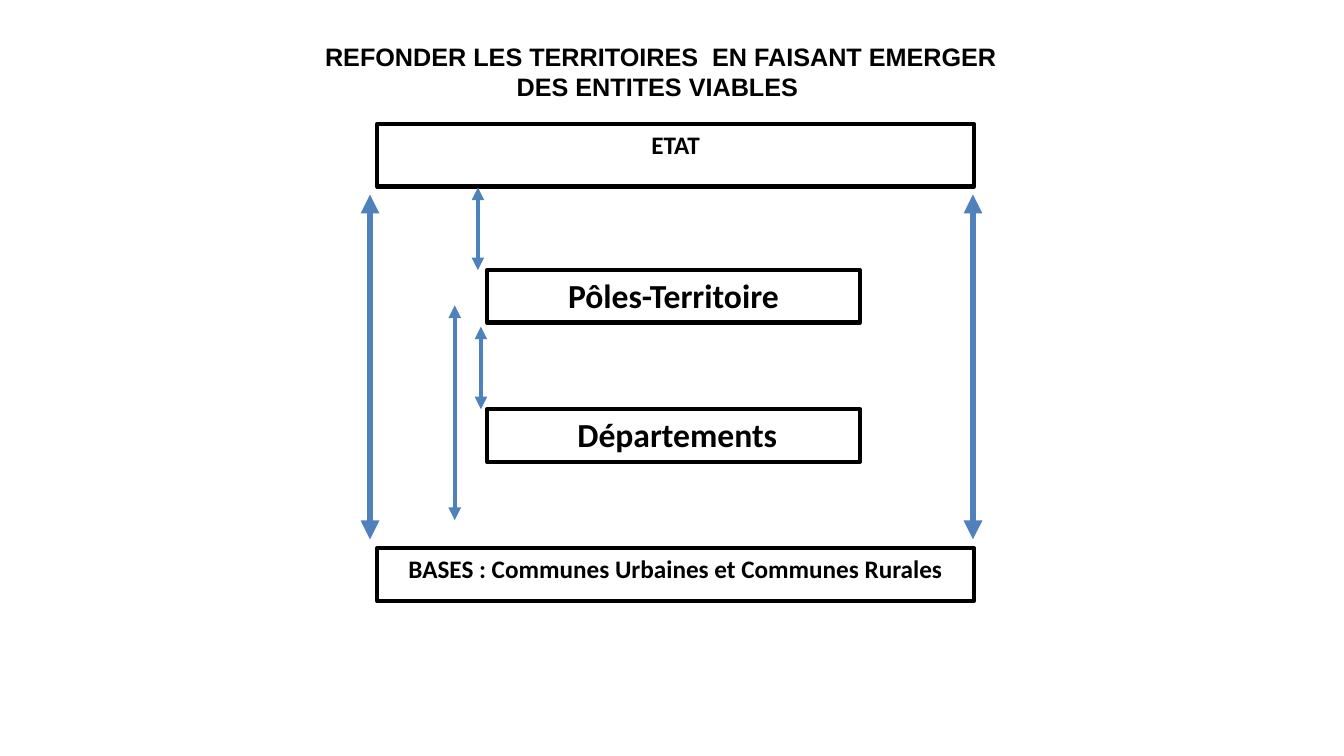
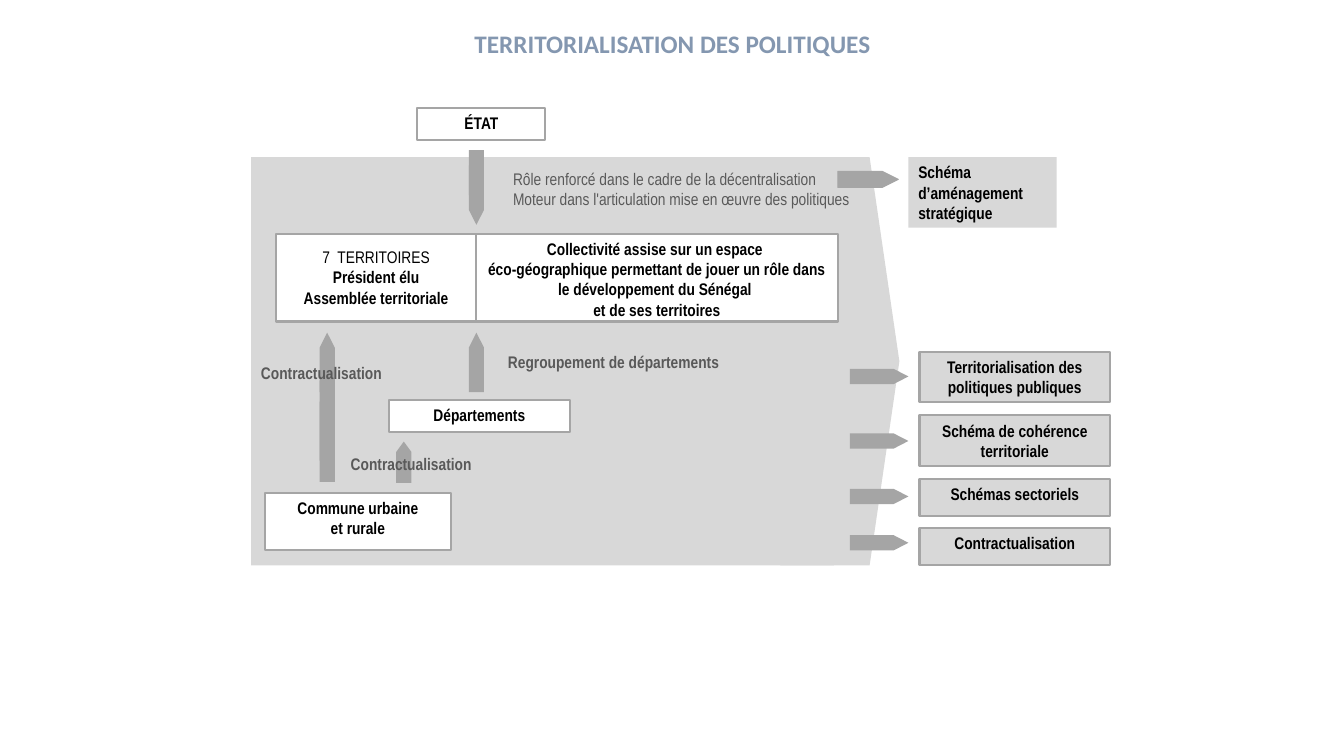
from dataclasses import dataclass

from lxml import etree
from pptx import Presentation
from pptx import util as u
from pptx.dml import color
from pptx.enum import shapes, text
from pptx.oxml import ns

HUES = {
    "black": "000000", "white": "FFFFFF", "blue": "4F81BD", "steel": "8497B0",
    "pale": "D8D8D8", "grey": "A5A5A5", "dark": "595959",
}
KIND = shapes.MSO_SHAPE
LEFT, MID = text.PP_ALIGN.LEFT, text.PP_ALIGN.CENTER
HEAD = 1.67  # point of a plate, relative to its length


@dataclass
class Box:
    x: float
    y: float
    w: float
    h: float
    words: str = ""
    size: float = 12
    fill: str = "white"
    edge: str = "grey"
    align: int = MID
    plain: int = 0  # leading lines that are not bold
    top: float = 0.05


@dataclass
class Label:
    x: float
    y: float
    w: float
    h: float
    words: str
    bold: bool = True


@dataclass
class Arrow:
    x: float
    top: float
    end: float
    width: float = 3


@dataclass
class Plate:
    x: float
    y: float
    w: float
    turn: int = 0
    h: float = 0.15
    edge: float = 0


def hue(name: str) -> color.RGBColor:
    return color.RGBColor.from_string(HUES[name])


def write(frame, words: str, *, font: str = "Arial Narrow", size: float = 12,
          tint: str = "black", bold: bool = True, plain: int = 0,
          align: int = MID, after: float = 0, top: float = 0.05) -> None:
    """Fill a text frame, one paragraph for each line of words."""
    frame.word_wrap = True
    frame.auto_size = text.MSO_AUTO_SIZE.NONE
    frame.vertical_anchor = text.MSO_ANCHOR.TOP
    frame.margin_left = frame.margin_right = u.Inches(0.1)
    frame.margin_top, frame.margin_bottom = u.Inches(top), u.Inches(0.05)
    for i, line in enumerate(words.split("\n")):
        para = frame.add_paragraph() if i else frame.paragraphs[0]
        para.alignment, para.space_after = align, u.Pt(after)
        run = para.add_run()
        run.text = line
        run.font.name, run.font.size = font, u.Pt(size)
        run.font.bold = bold and i >= plain
        run.font.color.rgb = hue(tint)


def place(item, x: float, y: float, w: float, h: float) -> None:
    item.left, item.top = u.Inches(x), u.Inches(y)
    item.width, item.height = u.Inches(w), u.Inches(h)


def new_page(deck, words: str, area: tuple, **style):
    page = deck.slides.add_slide(deck.slide_layouts[5])
    place(page.shapes.title, *area)
    write(page.shapes.title.text_frame, words, size=18, **style)
    return page


def draw(page, kind, x: float, y: float, w: float, h: float, fill: str,
         edge: str = "", width: float = 0):
    item = page.shapes.add_shape(
        kind, u.Inches(x), u.Inches(y), u.Inches(w), u.Inches(h))
    item.shadow.inherit = False
    item.fill.solid()
    item.fill.fore_color.rgb = hue(fill)
    if width:
        item.line.color.rgb = hue(edge)
        item.line.width = u.Pt(width)
    else:
        item.line.fill.background()
    return item


def add_box(page, box: Box, width: float = 1.5, **style) -> None:
    item = draw(page, KIND.RECTANGLE, box.x, box.y, box.w, box.h,
                box.fill, box.edge, width if box.edge else 0)
    write(item.text_frame, box.words, size=box.size, align=box.align,
          plain=box.plain, top=box.top, **style)


def add_label(page, label: Label) -> None:
    item = page.shapes.add_textbox(
        u.Inches(label.x), u.Inches(label.y),
        u.Inches(label.w), u.Inches(label.h))
    write(item.text_frame, label.words, tint="dark", bold=label.bold, align=LEFT)


def add_arrow(page, arrow: Arrow) -> None:
    """Vertical line with a point at each end."""
    x = u.Inches(arrow.x)
    item = page.shapes.add_connector(
        shapes.MSO_CONNECTOR.STRAIGHT,
        x, u.Inches(arrow.top), x, u.Inches(arrow.end))
    item.line.color.rgb = hue("blue")
    item.line.width = u.Pt(arrow.width)
    props = item.line._get_or_add_ln()
    for tag in ("a:headEnd", "a:tailEnd"):
        etree.SubElement(props, ns.qn(tag), type="triangle")
    etree.SubElement(item._element.spPr, ns.qn("a:effectLst"))


def add_plate(page, plate: Plate) -> None:
    item = draw(page, KIND.PENTAGON, plate.x, plate.y, plate.w, plate.h,
                "grey", "grey", plate.edge)
    item.adjustments[0] = plate.w * HEAD
    item.rotation = plate.turn


def levels(deck) -> None:
    page = new_page(
        deck, "REFONDER LES TERRITOIRES  EN FAISANT EMERGER DES ENTITES VIABLES ",
        (2.97, 0.36, 7.17, 1.01), font="Arial")

    # Levels of government, wide at both ends
    wide, slim = (3.74, 5.92), (4.83, 3.7)
    for (x, w), y, h, size, words in (
        (wide, 1.23, 0.62, 18, "ETAT"),
        (slim, 2.68, 0.52, 24, "Pôles-Territoire"),
        (slim, 4.06, 0.52, 24, " Départements"),
        (wide, 5.44, 0.52, 18, "BASES : Communes Urbaines et Communes Rurales"),
    ):
        add_box(page, Box(x, y, w, h, words, size, edge="black"), 3,
                font="Calibri", after=10)

    # Links between levels
    for arrow in (
        Arrow(3.67, 1.93, 5.35, 4.5), Arrow(9.65, 1.93, 5.35, 4.5),
        Arrow(4.51, 3.03, 5.16), Arrow(4.74, 1.86, 2.68),
        Arrow(4.77, 3.24, 4.06),
    ):
        add_arrow(page, arrow)


def policies(deck) -> None:
    page = new_page(deck, "TERRITORIALISATION DES POLITIQUES",
                    (3.23, 0.23, 6.88, 0.4), font="Calibri", tint="steel")

    # Backdrop pointing right
    point = draw(page, KIND.PENTAGON, 7.74, 1.56, 1.18, 4.05, "pale")
    point.adjustments[0] = 0.25
    draw(page, KIND.RECTANGLE, 2.49, 1.56, 5.78, 4.05, "pale")

    # Bodies and the leading scheme
    for box in (
        Box(4.14, 1.07, 1.27, 0.32, "ÉTAT"),
        Box(3.86, 3.97, 1.79, 0.32, "Départements"),
        Box(2.74, 2.32, 1.98, 0.87,
            "7  TERRITOIRES\nPrésident élu\nAssemblée territoriale",
            plain=1, top=0.13),
        Box(4.72, 2.32, 3.59, 0.87,
            "Collectivité assise sur un espace \n"
            "éco-géographique permettant de jouer un rôle dans "
            "le développement du Sénégal \net de ses territoires"),
        Box(2.63, 4.89, 1.84, 0.57, "Commune urbaine\net rurale"),
        Box(9.01, 1.56, 1.47, 0.7, "Schéma d’aménagement stratégique",
            fill="pale", edge="", align=LEFT),
    ):
        add_box(page, box)

    # Outcomes, each with its plate
    for y, h, tip, words in (
        (3.49, 0.5, 3.66, "Territorialisation des politiques publiques"),
        (4.12, 0.5, 4.3, "Schéma de cohérence territoriale"),
        (4.75, 0.37, 4.85, "Schémas sectoriels"),
        (5.24, 0.37, 5.31, "Contractualisation"),
    ):
        add_box(page, Box(9.12, y, 1.89, h, words, fill="pale"))
        add_plate(page, Plate(8.43, tip, 0.58))

    # Flows between bodies
    for plate in (
        Plate(2.72, 4.18, 1.05, 270), Plate(2.72, 3.97, 1.05, 270),
        Plate(2.95, 3.52, 0.59, 270), Plate(4.43, 3.52, 0.59, 270),
        Plate(4.43, 1.71, 0.59, 90), Plate(4.43, 1.86, 0.59, 90),
        Plate(3.8, 4.51, 0.41, 270), Plate(8.31, 1.7, 0.6, h=0.16, edge=0.75),
    ):
        add_plate(page, plate)

    # Notes on the flows
    for label in (
        Label(4.99, 1.62, 3.64, 0.53,
              "Rôle renforcé dans le cadre de la décentralisation\n"
              "Moteur dans l'articulation mise en œuvre des politiques", False),
        Label(4.94, 3.44, 2.7, 0.45, "Regroupement de départements"),
        Label(2.49, 3.55, 1.49, 0.33, "Contractualisation"),
        Label(3.38, 4.45, 1.49, 0.33, "Contractualisation"),
    ):
        add_label(page, label)


def main() -> None:
    deck = Presentation()
    deck.slide_width, deck.slide_height = u.Inches(13.33), u.Inches(7.5)
    levels(deck)
    policies(deck)
    deck.save("out.pptx")


if __name__ == "__main__":
    main()
